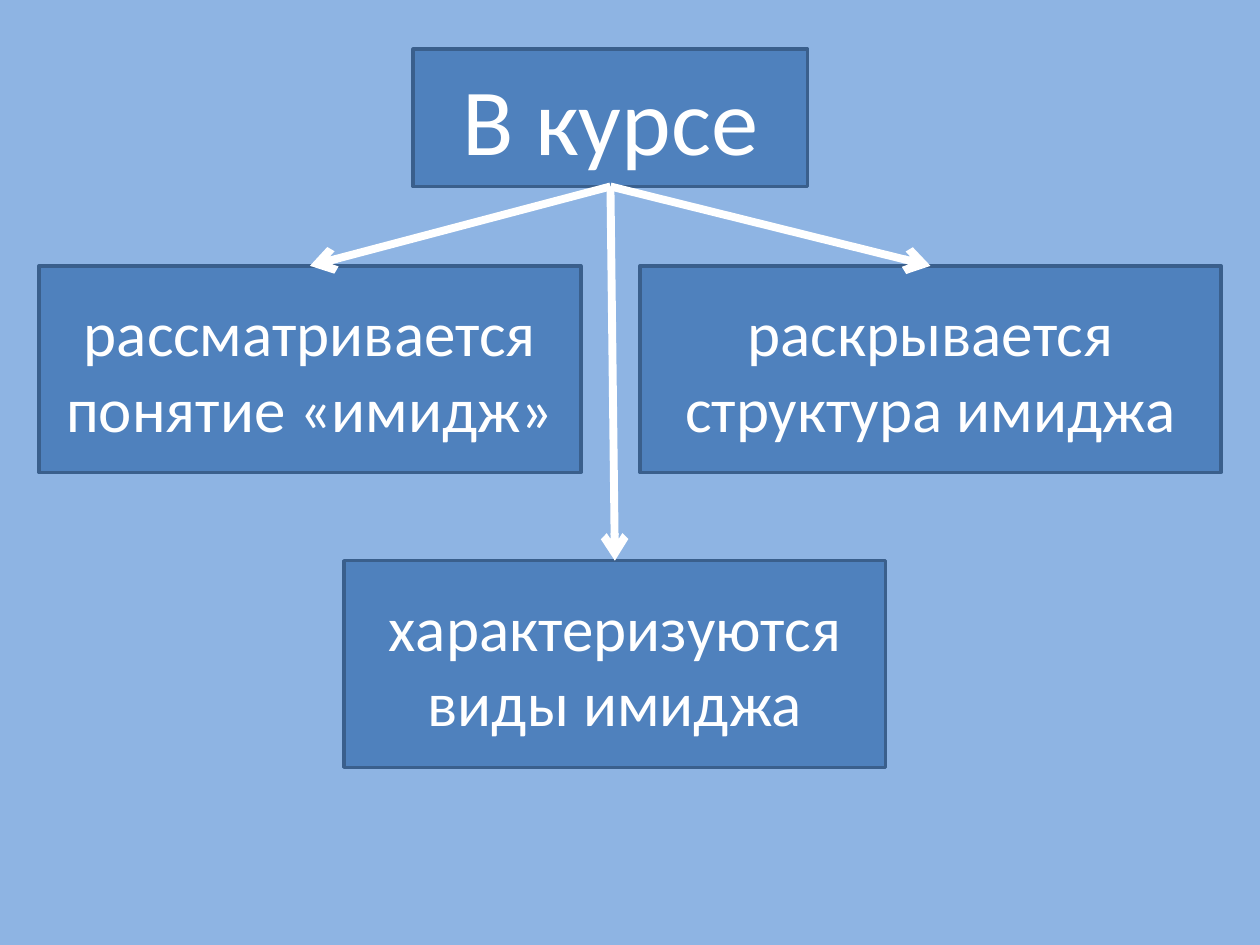
from dataclasses import dataclass

import lxml.etree
import pptx
import pptx.dml.color
import pptx.enum.shapes
import pptx.enum.text
import pptx.oxml.ns
import pptx.util

Inches = pptx.util.Inches
SITE_BOTTOM, SITE_TOP = 2, 0


@dataclass
class Topic:
    left: float
    top: float
    width: float
    height: float
    lines: list[str]
    size: int = 36


COURSE = Topic(3.28, 0.39, 3.13, 1.09, ["В курсе"], 54)
CONTENTS = [
    Topic(0.31, 2.11, 4.3, 1.64, ["рассматривается понятие «имидж»"]),
    Topic(5.08, 2.11, 4.61, 1.64, ["раскрывается структура имиджа"]),
    Topic(2.73, 4.45, 4.3, 1.64, ["характеризуются", "виды имиджа"]),
]


def paint(target, colour: str) -> None:
    target.solid()
    target.fore_color.rgb = pptx.dml.color.RGBColor.from_string(colour)


def draw_topic(page, topic: Topic):
    box = page.shapes.add_shape(
        pptx.enum.shapes.MSO_SHAPE.RECTANGLE,
        Inches(topic.left), Inches(topic.top),
        Inches(topic.width), Inches(topic.height),
    )
    box.shadow.inherit = False
    paint(box.fill, "4F81BD")
    paint(box.line.fill, "3A5F8C")
    box.line.width = pptx.util.Pt(2)
    frame = box.text_frame
    frame.word_wrap = True
    frame.vertical_anchor = pptx.enum.text.MSO_ANCHOR.MIDDLE
    for index, line in enumerate(topic.lines):
        para = frame.add_paragraph() if index else frame.paragraphs[0]
        para.alignment = pptx.enum.text.PP_ALIGN.CENTER
        span = para.add_run()
        span.text = line
        span.font.name = "Calibri"
        span.font.size = pptx.util.Pt(topic.size)
        paint(span.font.fill, "FFFFFF")
    return box


def draw_arrow(page, source, target) -> None:
    arrow = page.shapes.add_connector(
        pptx.enum.shapes.MSO_CONNECTOR.STRAIGHT, 0, 0, 0, 0
    )
    arrow.begin_connect(source, SITE_BOTTOM)
    arrow.end_connect(target, SITE_TOP)
    paint(arrow.line.fill, "FFFFFF")
    arrow.line.width = pptx.util.Pt(4.5)
    properties = arrow._element.spPr
    outline = properties.find(pptx.oxml.ns.qn("a:ln"))
    lxml.etree.SubElement(outline, pptx.oxml.ns.qn("a:tailEnd"), type="arrow")
    lxml.etree.SubElement(properties, pptx.oxml.ns.qn("a:effectLst"))


def main() -> None:
    deck = pptx.Presentation()
    deck.slide_width = Inches(10)
    deck.slide_height = Inches(7.5)
    page = deck.slides.add_slide(deck.slide_layouts[6])
    paint(page.background.fill, "8EB4E3")

    content_boxes = [draw_topic(page, topic) for topic in CONTENTS]
    course_box = draw_topic(page, COURSE)
    for content_box in content_boxes:
        draw_arrow(page, course_box, content_box)

    deck.save("out.pptx")


if __name__ == "__main__":
    main()
